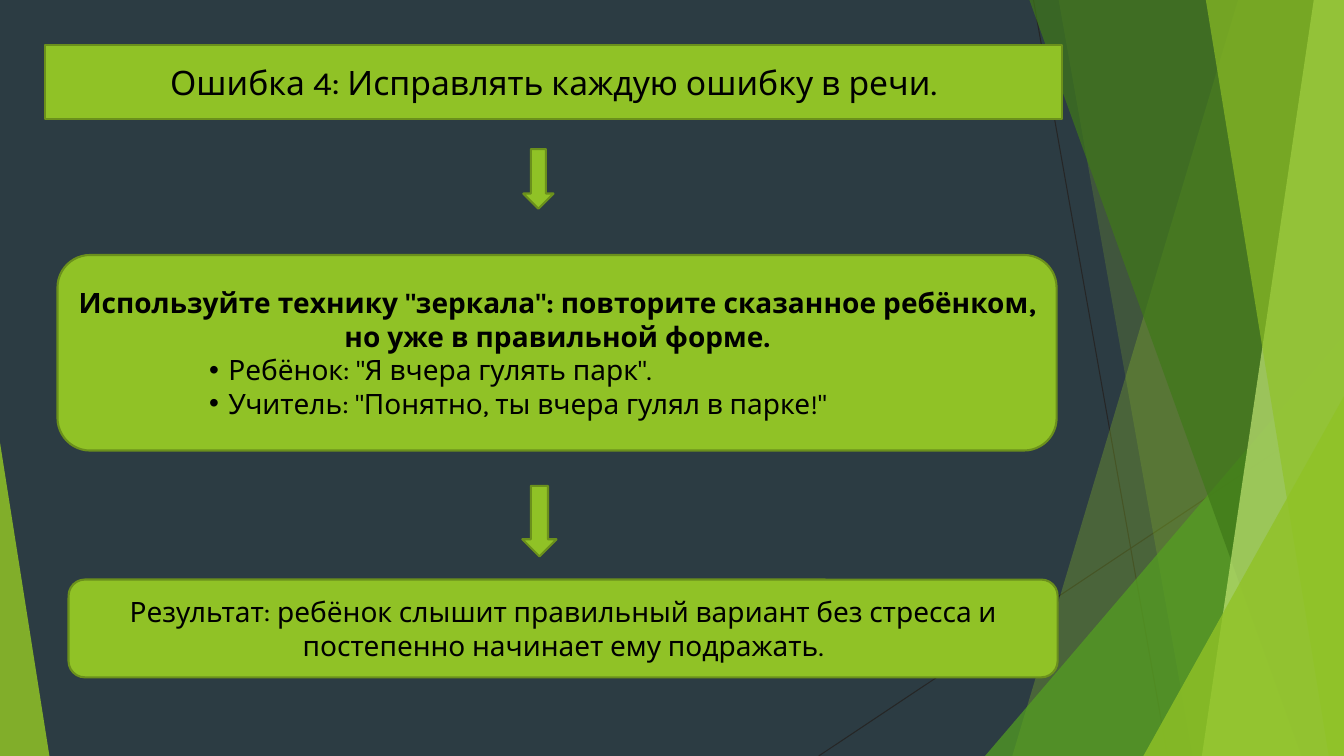
from dataclasses import dataclass

from lxml.etree import SubElement
from pptx import Presentation
from pptx.dml.color import RGBColor
from pptx.enum.shapes import MSO_CONNECTOR, MSO_SHAPE
from pptx.enum.text import MSO_ANCHOR, MSO_AUTO_SIZE, PP_ALIGN
from pptx.oxml.ns import qn
from pptx.util import Inches, Pt

WIDTH, HEIGHT = 13.33, 7.5
FONT = "Karla"
COLORS = {
    "background": "2C3C43",
    "lime": "90C226",
    "outline": "6B901C",
    "green": "54A021",
    "dark": "3F7819",
    "pale": "C0E474",
    "thread": "262626",
    "text": "000000",
}


@dataclass
class Frame:
    left: float
    top: float
    width: float
    height: float

    def lengths(self) -> tuple:
        return tuple(Inches(v) for v in (self.left, self.top, self.width, self.height))


@dataclass
class Thread:
    start: tuple
    end: tuple


@dataclass
class Facet:
    top_x: float
    bottom_x: float
    color: str
    opacity: int


@dataclass
class Triangle:
    frame: Frame
    apex: float
    color: str
    opacity: int


@dataclass
class Line:
    text: str
    size: int = 20
    bold: bool = False
    bullet: bool = False


THREADS = [
    Thread((10.25, 0), (11.58, HEIGHT)),
    Thread((WIDTH, 4.03), (8.12, HEIGHT)),
]
DECORATION = [
    Facet(12.28, 10.04, "lime", 30),
    Facet(10.5, 11.83, "lime", 20),
    Triangle(Frame(9.77, 3.33, 3.56, 4.17), 1, "green", 72),
    Facet(10.21, 12.91, "dark", 70),
    Facet(13.03, 11.92, "pale", 70),
    Facet(11.96, 13.18, "lime", 65),
    Triangle(Frame(11.34, 3.93, 1.99, 3.57), 1, "lime", 80),
    Triangle(Frame(0, 4.39, 0.49, 3.11), 0, "lime", 85),
]
ARROWS = [Frame(5.19, 1.48, 0.3, 0.59), Frame(5.18, 4.82, 0.34, 0.7)]
TITLE_FRAME = Frame(0.45, 0.45, 10.08, 0.73)
ADVICE_FRAME = Frame(0.57, 2.53, 9.91, 1.94)
RESULT_FRAME = Frame(0.68, 5.75, 9.81, 0.97)
TITLE = [Line("Ошибка 4: Исправлять каждую ошибку в речи.", size=24)]
ADVICE = [
    Line('Используйте технику "зеркала": повторите сказанное ребёнком, но уже в правильной форме.', bold=True),
    Line('Ребёнок: "Я вчера гулять парк".', bullet=True),
    Line('Учитель: "Понятно, ты вчера гулял в парке!"', bullet=True),
]
RESULT = [
    Line("Результат: ребёнок слышит правильный вариант без стресса и постепенно начинает ему подражать.")
]


def rgb(name: str) -> RGBColor:
    return RGBColor.from_string(COLORS[name])


def paint(shape, color: str) -> None:
    shape.fill.solid()
    shape.fill.fore_color.rgb = rgb(color)


def outline(shape) -> None:
    paint(shape, "lime")
    shape.line.color.rgb = rgb("outline")
    shape.line.width = Pt(1.5)


def add_thread(page, thread: Thread) -> None:
    ends = [Inches(v) for v in (*thread.start, *thread.end)]
    line = page.shapes.add_connector(MSO_CONNECTOR.STRAIGHT, *ends)
    line.line.color.rgb = rgb("thread")
    line.line.width = Pt(0.75)
    SubElement(line._element.spPr, qn("a:effectLst"))


def add_decoration(page, item: Facet | Triangle) -> None:
    if isinstance(item, Triangle):
        shape = page.shapes.add_shape(MSO_SHAPE.ISOSCELES_TRIANGLE, *item.frame.lengths())
        shape.adjustments[0] = item.apex
    else:
        corners = [(WIDTH, 0), (WIDTH, HEIGHT), (item.bottom_x, HEIGHT)]
        builder = page.shapes.build_freeform(Inches(item.top_x), 0)
        builder.add_line_segments([(Inches(x), Inches(y)) for x, y in corners])
        shape = builder.convert_to_shape()
    shape.shadow.inherit = False
    paint(shape, item.color)
    shape.line.fill.background()
    color = shape._element.spPr.find(".//" + qn("a:srgbClr"))
    SubElement(color, qn("a:alpha"), val=str(item.opacity * 1000))


def add_arrow(page, frame: Frame) -> None:
    arrow = page.shapes.add_shape(MSO_SHAPE.DOWN_ARROW, *frame.lengths())
    arrow.shadow.inherit = False
    outline(arrow)


def set_bullet(para, bullet: bool) -> None:
    props = para._p.get_or_add_pPr()
    props.set("marL", str(Inches(1.52 if bullet else 0)))
    props.set("indent", str(Inches(-0.19 if bullet else 0)))
    if bullet:
        SubElement(props, qn("a:buChar"), char="•")
    else:
        SubElement(props, qn("a:buNone"))


def write(shape, lines: list[Line]) -> None:
    frame = shape.text_frame
    frame.word_wrap = True
    frame.auto_size = MSO_AUTO_SIZE.NONE
    frame.vertical_anchor = MSO_ANCHOR.MIDDLE
    frame.margin_left = frame.margin_right = Inches(0.08)
    for index, line in enumerate(lines):
        para = frame.add_paragraph() if index else frame.paragraphs[0]
        para.text = line.text
        para.alignment = PP_ALIGN.LEFT if line.bullet else PP_ALIGN.CENTER
        para.space_before = Pt(0)
        para.font.name = FONT
        para.font.size = Pt(line.size)
        para.font.bold = line.bold
        para.font.color.rgb = rgb("text")
        set_bullet(para, line.bullet)


def fill_placeholder(page, holder, frame: Frame, lines: list[Line]) -> None:
    holder.left, holder.top, holder.width, holder.height = frame.lengths()
    geometry = SubElement(holder._element.spPr, qn("a:prstGeom"), prst="roundRect")
    SubElement(geometry, qn("a:avLst"))
    outline(holder)
    write(holder, lines)
    page.shapes._spTree.append(holder._element)


def main() -> None:
    deck = Presentation()
    deck.slide_width, deck.slide_height = Inches(WIDTH), Inches(HEIGHT)
    page = deck.slides.add_slide(deck.slide_layouts[1])
    paint(page.background, "background")
    for thread in THREADS:
        add_thread(page, thread)
    for item in DECORATION:
        add_decoration(page, item)
    fill_placeholder(page, page.shapes.title, TITLE_FRAME, TITLE)
    fill_placeholder(page, page.placeholders[1], ADVICE_FRAME, ADVICE)
    for frame in ARROWS:
        add_arrow(page, frame)
    result = page.shapes.add_shape(MSO_SHAPE.ROUNDED_RECTANGLE, *RESULT_FRAME.lengths())
    result.shadow.inherit = False
    outline(result)
    write(result, RESULT)
    deck.save("out.pptx")


if __name__ == "__main__":
    main()
